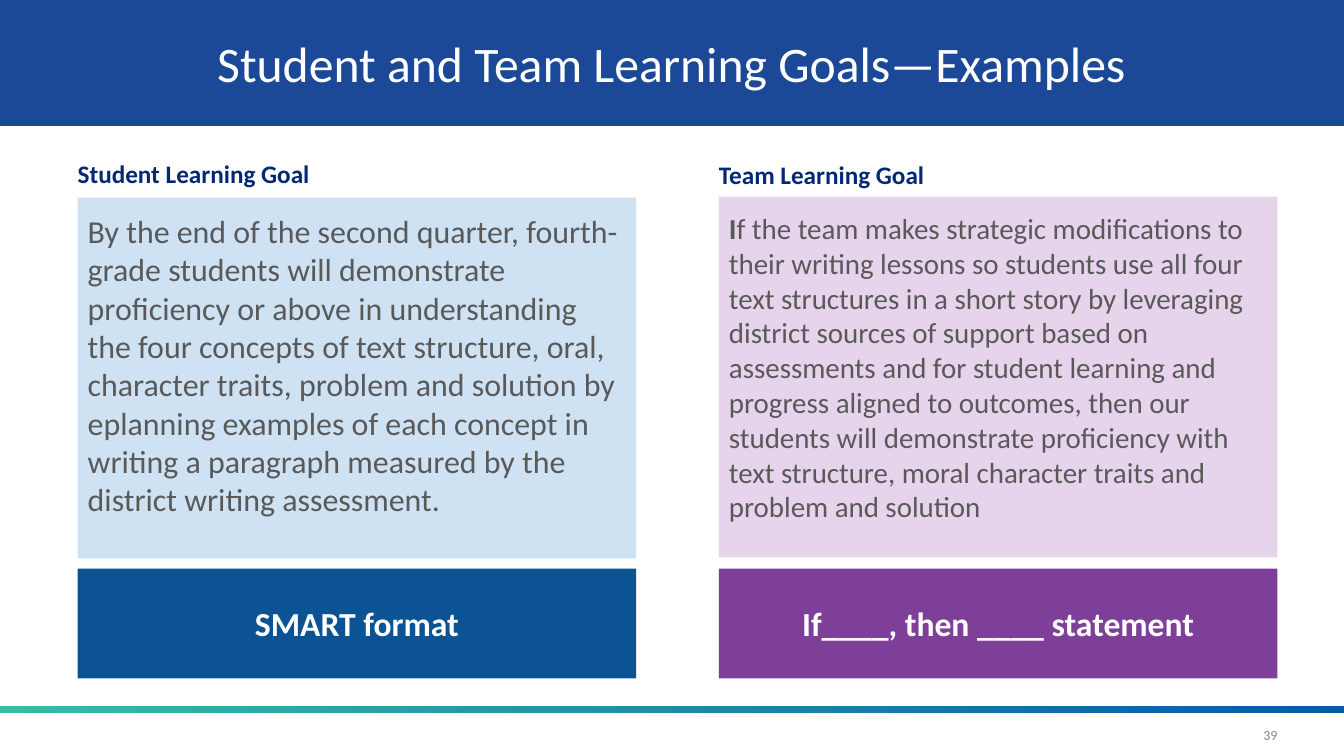
import pptx
import pptx.dml.color
import pptx.enum.shapes
import pptx.enum.text
import pptx.oxml.ns
import pptx.util
from lxml import etree

Inches = pptx.util.Inches
ALIGN = pptx.enum.text.PP_ALIGN
ANCHOR = pptx.enum.text.MSO_ANCHOR

COLORS = {
    "title_bar": "1B4997", "heading": "032975", "body": "595959",
    "white": "FFFFFF", "number": "898989",
    "student_light": "CFE2F3", "student_dark": "0B5394",
    "team_light": "E6D4ED", "team_dark": "7E3F98",
    "bar_start": "37BCA5", "bar_end": "0959A7",
}
COLUMN_WIDTH = 5.54
GOALS = [
    {
        "left": 0.77, "heading_top": 1.49, "body_top": 1.96, "size": 22.8,
        "heading": "Student Learning Goal",
        "body": [("By the end of the second quarter, fourth-grade students will demonstrate "
                  "proficiency or above in understanding the four concepts of text structure, "
                  "oral, character traits, problem and solution by eplanning examples of each "
                  "concept in writing a paragraph measured by the district writing assessment.",
                  False)],
        "format": "SMART format", "light": "student_light", "dark": "student_dark",
    },
    {
        "left": 7.13, "heading_top": 1.5, "body_top": 1.95, "size": 20.7,
        "heading": "Team Learning Goal",
        "body": [("I", True),
                 ("f the team makes strategic modifications to their writing lessons so "
                  "students use all four text structures in a short story by leveraging "
                  "district sources of support based on assessments and for student learning "
                  "and progress aligned to outcomes, then our students will demonstrate "
                  "proficiency with text structure, moral character traits and problem and "
                  "solution", False)],
        "format": "If____, then ____ statement", "light": "team_light", "dark": "team_dark",
    },
]


class GoalSlide:
    font_name = "Calibri"

    def __init__(self, presentation):
        comparison_layout = presentation.slide_layouts[4]
        self.slide = presentation.slides.add_slide(comparison_layout)

    def color(self, name):
        return pptx.dml.color.RGBColor.from_string(COLORS[name])

    def fill(self, shape, name):
        shape.fill.solid()
        shape.fill.fore_color.rgb = self.color(name)

    def set_text(self, shape, runs, size, color, align=ALIGN.LEFT,
                 anchor=ANCHOR.MIDDLE, margins=(0, 0)):
        """Fill a shape with one unbulleted paragraph of (text, bold) runs."""
        frame = shape.text_frame
        frame.word_wrap = True
        frame.auto_size = pptx.enum.text.MSO_AUTO_SIZE.NONE
        frame.vertical_anchor = anchor
        frame.margin_left = frame.margin_right = Inches(margins[0])
        frame.margin_top = frame.margin_bottom = Inches(margins[1])
        paragraph = frame.paragraphs[0]
        properties = paragraph._p.get_or_add_pPr()
        properties.set("marL", "0")
        properties.set("indent", "0")
        etree.SubElement(properties, pptx.oxml.ns.qn("a:buNone"))
        paragraph.alignment = align
        paragraph.space_before = pptx.util.Pt(0)
        for text, bold in runs:
            run = paragraph.add_run()
            run.text = text
            run.font.name = self.font_name
            run.font.size = pptx.util.Pt(size)
            run.font.bold = bold
            run.font.color.rgb = self.color(color)

    def placeholder(self, index, left, top, width, height):
        shape = self.slide.placeholders[index]
        shape.left, shape.top = Inches(left), Inches(top)
        shape.width, shape.height = Inches(width), Inches(height)
        return shape

    def rectangle(self, left, top, width, height):
        shape = self.slide.shapes.add_shape(
            pptx.enum.shapes.MSO_SHAPE.RECTANGLE,
            Inches(left), Inches(top), Inches(width), Inches(height))
        shape.shadow.inherit = False
        shape.line.fill.background()
        return shape

    def title(self, text):
        shape = self.placeholder(0, 0, 0, 13.33, 1.25)
        self.fill(shape, "title_bar")
        self.set_text(shape, [(text, False)], 35.5, "white", ALIGN.CENTER, margins=(0.1, 0.05))

    def goal(self, goal, heading_index):
        left = goal["left"]
        heading = self.placeholder(heading_index, left, goal["heading_top"], COLUMN_WIDTH, 0.46)
        self.set_text(heading, [(goal["heading"], True)], 18, "heading")

        body = self.placeholder(heading_index + 1, left, goal["body_top"], COLUMN_WIDTH, 3.58)
        self.fill(body, goal["light"])
        self.set_text(body, goal["body"], goal["size"], "body",
                      anchor=ANCHOR.TOP, margins=(0.1, 0.14))

        format_box = self.rectangle(left, 5.64, COLUMN_WIDTH, 1.09)
        self.fill(format_box, goal["dark"])
        self.set_text(format_box, [(goal["format"], True)], 24, "white",
                      ALIGN.CENTER, margins=(0.1, 0.1))

    def footer(self, number):
        bar = self.rectangle(0, 7, 13.33, 0.07)
        bar.fill.gradient()
        bar.fill.gradient_angle = 0
        for stop, name in zip(bar.fill.gradient_stops, ("bar_start", "bar_end")):
            stop.color.rgb = self.color(name)
        box = self.slide.shapes.add_textbox(
            Inches(11.84), Inches(7.23), Inches(0.83), Inches(0.13))
        self.set_text(box, [(number, False)], 10, "number", ALIGN.RIGHT)


def main():
    presentation = pptx.Presentation()
    presentation.slide_width = Inches(13.33)
    presentation.slide_height = Inches(7.5)
    goal_slide = GoalSlide(presentation)
    goal_slide.title("Student and Team Learning Goals—Examples")
    for goal, heading_index in zip(GOALS, (1, 3)):
        goal_slide.goal(goal, heading_index)
    goal_slide.footer("39")
    presentation.save("out.pptx")


if __name__ == "__main__":
    main()
